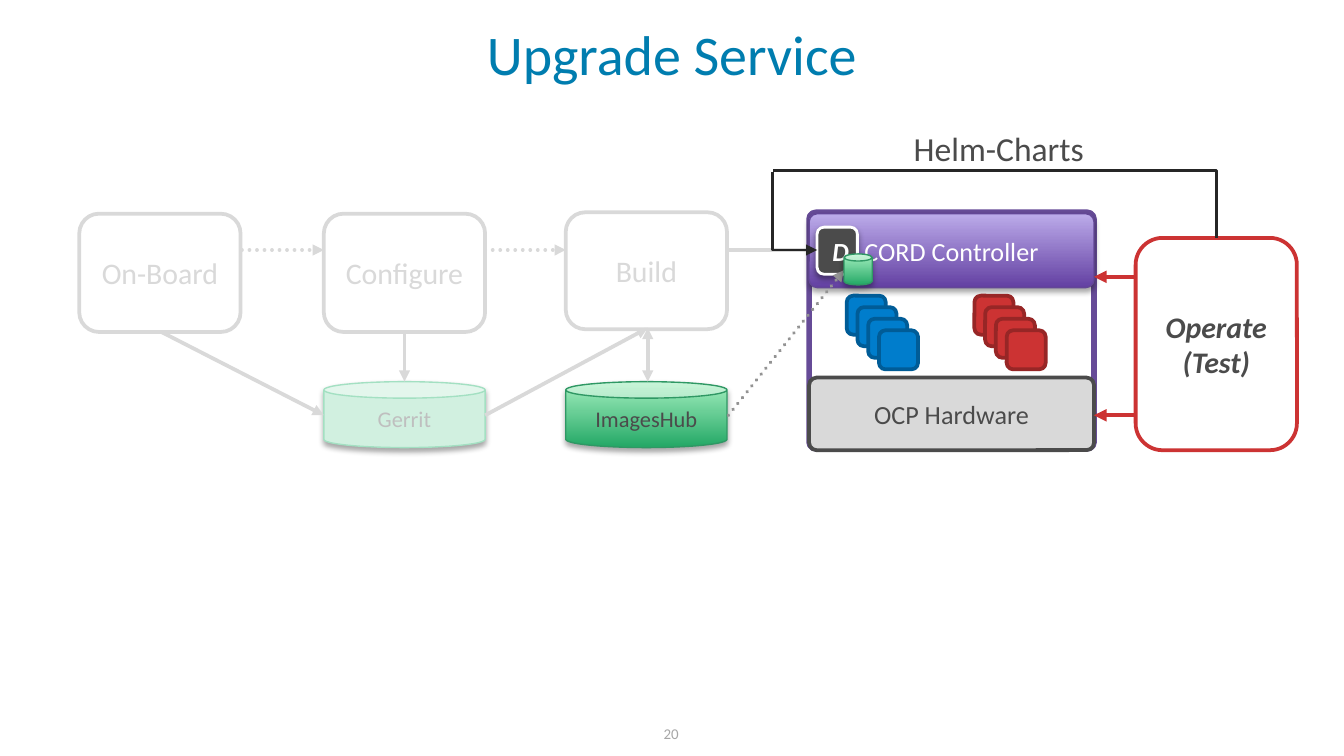
from dataclasses import dataclass
from typing import Optional

from lxml import etree
from pptx import Presentation
from pptx import util as u
from pptx.dml.color import RGBColor
from pptx.enum import dml, shapes, text
from pptx.oxml import ns

COLORS = {
    "white": "FFFFFF", "black": "000000", "title": "007DAF", "muted": "D9D9D9",
    "page": "A6A6A6", "dark": "4B4B4B", "wire": "262626", "dots": "939393",
    "blue": "007DCC", "blue_edge": "005C97", "red": "CC3333", "red_edge": "972626",
    "frame": "664B97", "purple": "6340A2", "purple_light": "BCABEA",
    "purple_edge": "634796", "green": "24A866", "green_light": "A4EFBF",
    "green_edge": "2F9864", "mint": "D1F0E0", "mint_edge": "A3E0C2",
    "faded": "BFBFBF",
}
ROUND = shapes.MSO_SHAPE.ROUNDED_RECTANGLE
CAN = shapes.MSO_SHAPE.CAN


@dataclass
class Box:
    left: float
    top: float
    width: float
    height: float
    fill: str
    edge: str
    edge_width: float = 2
    label: str = ""
    size: float = 16
    color: str = "muted"
    bold: bool = False
    kind: shapes.MSO_SHAPE = ROUND
    corner: Optional[float] = None
    fill_top: str = ""
    shadow: int = 0  # opacity in percent


@dataclass
class Arrow:
    start: tuple[float, float]
    end: tuple[float, float]
    color: str = "muted"
    width: float = 2
    dotted: bool = False
    head: bool = False
    tail: bool = True
    bend: Optional[int] = None  # rotation of a one-corner connector


def rgb(name: str) -> RGBColor:
    return RGBColor.from_string(COLORS[name])


def write(frame, content: str, *, size: float, color: str, bold: bool = False,
          align=text.PP_ALIGN.CENTER, anchor=text.MSO_ANCHOR.MIDDLE,
          wrap: bool = True, line_spacing=None) -> None:
    frame.text = content
    frame.word_wrap = wrap
    frame.vertical_anchor = anchor
    for paragraph in frame.paragraphs:
        paragraph.alignment = align
        if line_spacing is not None:
            paragraph.line_spacing = line_spacing
        for run in paragraph.runs:
            run.font.name = "Calibri"
            run.font.size = u.Pt(size)
            run.font.color.rgb = rgb(color)
            run.font.bold = run.font.italic = bold


def add_shadow(shape, opacity: int) -> None:
    effects = shape._element.spPr.find(ns.qn("a:effectLst"))
    outer = etree.SubElement(effects, ns.qn("a:outerShdw"), blurRad=str(u.Pt(3.1)),
                             dist=str(u.Pt(1.8)), dir="5400000", rotWithShape="0")
    color = etree.SubElement(outer, ns.qn("a:srgbClr"), val=COLORS["black"])
    etree.SubElement(color, ns.qn("a:alpha"), val=str(opacity * 1000))


def draw_box(slide, box: Box) -> None:
    shape = slide.shapes.add_shape(box.kind, *map(
        u.Inches, (box.left, box.top, box.width, box.height)))
    if box.corner is not None:
        shape.adjustments[0] = box.corner
    if box.fill_top:
        shape.fill.gradient()
        shape.fill.gradient_angle = 90
        for stop, name in zip(shape.fill.gradient_stops, (box.fill, box.fill_top)):
            stop.color.rgb = rgb(name)
    else:
        shape.fill.solid()
        shape.fill.fore_color.rgb = rgb(box.fill)
    shape.line.color.rgb = rgb(box.edge)
    shape.line.width = u.Pt(box.edge_width)
    shape.shadow.inherit = False
    if box.shadow:
        add_shadow(shape, box.shadow)
    if box.label:
        write(shape.text_frame, box.label, size=box.size, color=box.color, bold=box.bold)


def draw_arrow(slide, arrow: Arrow) -> None:
    connector = slide.shapes.add_connector(
        shapes.MSO_CONNECTOR.STRAIGHT, *map(u.Inches, arrow.start + arrow.end))
    properties = connector._element.spPr
    if arrow.bend is not None:
        properties.find(ns.qn("a:prstGeom")).set("prst", "bentConnector2")
        properties.find(ns.qn("a:xfrm")).set("rot", str(arrow.bend * 60000))
    connector.line.color.rgb = rgb(arrow.color)
    connector.line.width = u.Pt(arrow.width)
    line = properties.find(ns.qn("a:ln"))
    if arrow.dotted:
        connector.line.dash_style = dml.MSO_LINE.ROUND_DOT
        line.set("cap", "rnd")
    for tag, shown in (("a:headEnd", arrow.head), ("a:tailEnd", arrow.tail)):
        if shown:
            etree.SubElement(line, ns.qn(tag), type="triangle")
    etree.SubElement(properties, ns.qn("a:effectLst"))


def add_text(slide, left: float, top: float, width: float, height: float,
             content: str, **style) -> None:
    box = slide.shapes.add_textbox(*map(u.Inches, (left, top, width, height)))
    write(box.text_frame, content, **style)


def stage(left: float, top: float, label: str, height: float = 0.88) -> Box:
    return Box(left, top, 1.2, height, "white", "muted", label=label)


def green_can(left: float, top: float, width: float, height: float,
              label: str = "") -> Box:
    return Box(left, top, width, height, "green", "green_edge", 0.75, label, 12,
               "dark", kind=CAN, fill_top="green_light", shadow=35)


def tile_stack(left: float, color: str) -> list[Box]:
    return [Box(left + 0.08 * i, 2.2 + 0.086 * i, 0.29, 0.29, color, f"{color}_edge")
            for i in range(4)]


def main() -> None:
    presentation = Presentation()
    # Widescreen, 16:9
    presentation.slide_width = u.Inches(10)
    presentation.slide_height = u.Emu(presentation.slide_width * 9 // 16)
    slide = presentation.slides.add_slide(presentation.slide_layouts[5])

    # Title and page number
    title = slide.shapes.title
    title.left, title.top, title.width, title.height = map(u.Inches, (0.5, 0.12, 9, 0.58))
    write(title.text_frame, "Upgrade Service", size=30, color="title",
          anchor=text.MSO_ANCHOR.TOP, line_spacing=u.Pt(34))
    add_text(slide, 3.83, 5.31, 2.33, 0.3, "20", size=8, color="page")

    # Parts of the pipeline, from back to front
    parts = [
        Arrow((5.42, 1.86), (6.08, 1.86)),
        stage(0.59, 1.59, "On-Board"),
        stage(2.41, 1.59, "Configure"),
        stage(4.21, 1.58, "Build", 0.87),
        # Controller stack
        Box(6.02, 1.58, 2.12, 1.76, "white", "frame", 3, corner=0.028),
        Box(6.02, 1.59, 2.12, 0.55, "purple", "purple_edge", 0.75, "CORD Controller",
            14, "white", corner=0.11, fill_top="purple_light", shadow=35),
        Box(6.02, 2.81, 2.12, 0.54, "muted", "dark", 2, "OCP Hardware", 14, "dark",
            corner=0.103),
        *tile_stack(6.3, "blue"),
        *tile_stack(7.25, "red"),
        Box(6.08, 1.69, 0.3, 0.35, "dark", "white", 1.5, "D", 14, "white", True,
            shadow=38),
        # Repositories
        Box(2.41, 2.84, 1.2, 0.49, "mint", "mint_edge", 0.75, "Gerrit", 12, "faded",
            kind=CAN, shadow=35),
        green_can(4.21, 2.84, 1.2, 0.49, "ImagesHub"),
        # Flow between stages and repositories
        Arrow((3.61, 1.86), (4.21, 1.86), dotted=True),
        Arrow((1.8, 1.86), (2.41, 1.86), dotted=True),
        Arrow((1.2, 2.47), (2.41, 3.09)),
        Arrow((3.01, 2.47), (3.01, 2.84)),
        Arrow((3.61, 3.09), (4.82, 2.44)),
        Arrow((4.82, 2.44), (4.82, 2.84), head=True),
        Arrow((5.42, 3.09), (6.28, 2.01), "dots", dotted=True),
        green_can(6.28, 1.89, 0.21, 0.23),
        # Operation and its feedback
        Arrow((8.45, 2.06), (8.14, 2.06), "red", 2.25),
        Box(8.45, 1.77, 1.2, 1.58, "white", "red", label="Operate\n(Test)",
            color="dark", bold=True),
        Arrow((8.45, 3.09), (8.14, 3.09), "red", 2.25),
        Arrow((7.15, 3.17), (7.65, -0.13), "wire", 1.5, tail=False, bend=270),
        Arrow((5.75, 1.28), (6.08, 1.86), "wire", 1.5, head=True, tail=False, bend=180),
    ]
    for part in parts:
        if isinstance(part, Box):
            draw_box(slide, part)
        else:
            draw_arrow(slide, part)

    add_text(slide, 6.7, 0.9, 1.48, 0.4, "Helm-Charts", size=18, color="dark",
             align=text.PP_ALIGN.LEFT, anchor=text.MSO_ANCHOR.TOP, wrap=False)
    presentation.save("out.pptx")


if __name__ == "__main__":
    main()
